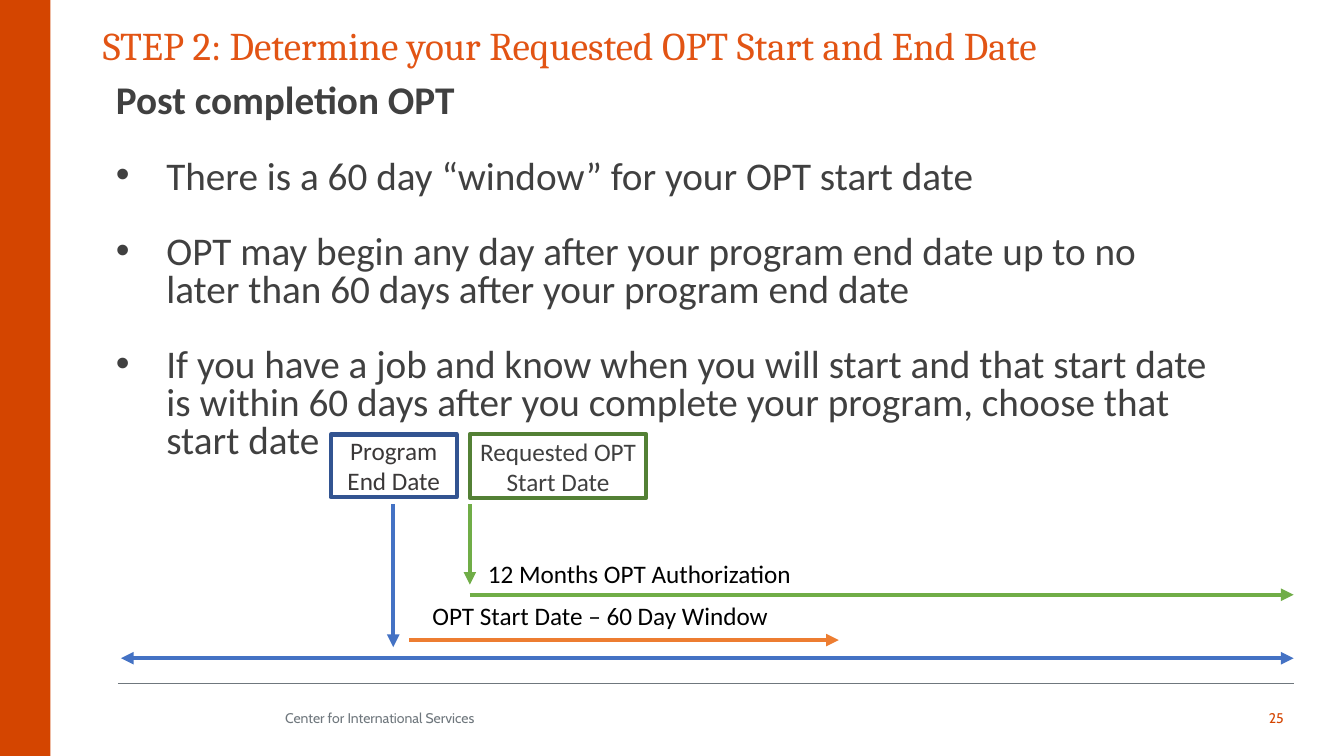
from collections import namedtuple
from dataclasses import dataclass

from lxml import etree
from pptx import Presentation
from pptx import util as u
from pptx.dml.color import RGBColor
from pptx.enum import shapes, text
from pptx.oxml.ns import qn

PX = 9144
Box = namedtuple("Box", "left top width height")


@dataclass(frozen=True)
class Theme:
    accent: str = "D44500"
    title: str = "E25414"
    body: str = "404040"
    muted: str = "6F777D"
    black: str = "000000"
    program: str = "4472C4"
    program_box: str = "325491"
    program_text: str = "3B3838"
    window: str = "ED7D31"
    authorization: str = "70AD47"
    start_box: str = "538035"
    title_font: str = "Cambria"
    body_font: str = "Calibri"
    footer_font: str = "Cabin"
    heading_size: int = 28
    label_size: int = 18
    footer_size: int = 10
    arrow_width: int = 3


THEME = Theme()
TOP, MIDDLE = text.MSO_ANCHOR.TOP, text.MSO_ANCHOR.MIDDLE
LEFT, CENTER, RIGHT = text.PP_ALIGN.LEFT, text.PP_ALIGN.CENTER, text.PP_ALIGN.RIGHT


def apply(target, values):
    for name, value in values.items():
        setattr(target, name, value)


def place(shape, box):
    apply(shape, {name: value * PX for name, value in box._asdict().items()})


def write(paragraph, words, font, size, color, align=LEFT, **paragraph_format):
    paragraph.text = words
    apply(paragraph, {"alignment": align, **paragraph_format})
    apply(paragraph.font, {"name": font, "size": u.Pt(size)})
    paragraph.font.color.rgb = RGBColor.from_string(color)


def set_frame(shape, anchor):
    apply(shape.text_frame, {
        "word_wrap": True,
        "auto_size": text.MSO_AUTO_SIZE.NONE,
        "vertical_anchor": anchor,
    })


def add_label(slide, box, words, font, size, color, align=LEFT, anchor=TOP):
    label = slide.shapes.add_textbox(*(value * PX for value in box))
    set_frame(label, anchor)
    write(label.text_frame.paragraphs[0], words, font, size, color, align)


def add_line(slide, start, end, color, width, arrows=()):
    points = [value * PX for value in (*start, *end)]
    connector = slide.shapes.add_connector(shapes.MSO_CONNECTOR.STRAIGHT, *points)
    connector.line.color.rgb = RGBColor.from_string(color)
    connector.line.width = u.Pt(width)
    properties = connector._element.spPr
    for arrow in arrows:
        etree.SubElement(properties.find(qn("a:ln")), qn(f"a:{arrow}"), type="triangle")
    etree.SubElement(properties, qn("a:effectLst"))


def add_arrow(slide, start, end, color, arrows=("tailEnd",)):
    add_line(slide, start, end, color, THEME.arrow_width, arrows)


def add_date_box(slide, box, words, border, color):
    shape = slide.shapes.add_shape(
        shapes.MSO_SHAPE.RECTANGLE, *(value * PX for value in box))
    shape.shadow.inherit = False
    shape.fill.background()
    shape.line.color.rgb = RGBColor.from_string(border)
    shape.line.width = u.Pt(THEME.arrow_width)
    set_frame(shape, MIDDLE)
    write(shape.text_frame.paragraphs[0], words, THEME.body_font,
          THEME.label_size, color, CENTER)


def add_side_bar(slide, box):
    bar = slide.shapes.add_shape(
        shapes.MSO_SHAPE.RECTANGLE, *(value * PX for value in box))
    bar.shadow.inherit = False
    bar.fill.solid()
    bar.fill.fore_color.rgb = RGBColor.from_string(THEME.accent)
    bar.line.fill.background()


def fill_title(slide, box, words):
    title = slide.shapes.title
    place(title, box)
    set_frame(title, TOP)
    write(title.text_frame.paragraphs[0], words, THEME.title_font,
          THEME.heading_size, THEME.title)


def set_bullet(paragraph, character):
    properties = paragraph._p.get_or_add_pPr()
    indent = 50 * PX if character else 0
    properties.set("marL", str(indent))
    properties.set("indent", str(-indent))
    if character:
        etree.SubElement(properties, qn("a:buFont"), typeface="Arial")
        etree.SubElement(properties, qn("a:buChar"), char=character)
    else:
        etree.SubElement(properties, qn("a:buNone"))


def fill_body(slide, box, heading, bullets):
    body = slide.placeholders[1]
    place(body, box)
    set_frame(body, TOP)
    frame = body.text_frame
    for index, words in enumerate([heading, *bullets]):
        paragraph = frame.add_paragraph() if index else frame.paragraphs[0]
        set_bullet(paragraph, "•" if index else None)
        write(paragraph, words, THEME.body_font, THEME.heading_size, THEME.body,
              line_spacing=0.8, space_before=u.Pt(27 if index else 0),
              space_after=u.Pt(0))
        paragraph.font.bold = index == 0


def add_timeline(slide, box):
    left, top, width, height = box
    right, bottom = left + width, top + height
    program_x, start_x = left + 270, left + 346
    stem_top = top + 69
    window_y, authorization_y = bottom - 18, bottom - 63

    add_arrow(slide, (left, bottom), (right, bottom), THEME.program,
              ("headEnd", "tailEnd"))
    add_arrow(slide, (program_x, stem_top), (program_x, bottom - 11), THEME.program)
    add_date_box(slide, Box(program_x - 62, top, 125, 62), "Program End Date",
                 THEME.program_box, THEME.program_text)

    add_arrow(slide, (left + 286, window_y), (left + 712, window_y), THEME.window)
    add_arrow(slide, (start_x, stem_top), (start_x, authorization_y - 10),
              THEME.authorization)
    add_date_box(slide, Box(start_x, top, 175, 63), "Requested OPT Start Date",
                 THEME.start_box, THEME.body)
    add_arrow(slide, (start_x, authorization_y), (right, authorization_y),
              THEME.authorization)

    for label_box, words in (
        (Box(left + 299, window_y - 44, 400, 40), "OPT Start Date – 60 Day Window"),
        (Box(start_x + 8, authorization_y - 41, 476, 40), "12 Months OPT Authorization"),
    ):
        add_label(slide, label_box, words, THEME.body_font, THEME.label_size, THEME.black)


def add_footer(slide, box, words, number):
    left, top, width, height = box
    right = left + width
    add_line(slide, (left, top), (right, top), THEME.muted, 0.5)
    for label_box, label, color, align in (
        (Box(left + 156, top + 14, 944, height), words, THEME.muted, LEFT),
        (Box(right - 67, top + 14, 67, height), number, THEME.accent, RIGHT),
    ):
        add_label(slide, label_box, label, THEME.footer_font, THEME.footer_size,
                  color, align, MIDDLE)


def build_start_date_slide(presentation):
    slide = presentation.slides.add_slide(presentation.slide_layouts[1])
    add_side_bar(slide, Box(0, 0, 50, 750))
    fill_title(slide, Box(92, 16, 1099, 92),
               "STEP 2: Determine your Requested OPT Start and End Date")
    fill_body(slide, Box(105, 79, 1112, 387), "Post completion OPT", [
        "There is a 60 day “window” for your OPT start date",
        "OPT may begin any day after your program end date up to no later than "
        "60 days after your program end date",
        "If you have a job and know when you will start and that start date is "
        "within 60 days after you complete your program, choose that start date",
    ])
    add_timeline(slide, Box(120, 431, 1163, 222))
    add_footer(slide, Box(117, 678, 1166, 40), "Center for International Services", "25")


def main():
    presentation = Presentation()
    apply(presentation, {"slide_width": 1333 * PX, "slide_height": 750 * PX})
    build_start_date_slide(presentation)
    presentation.save("out.pptx")


if __name__ == "__main__":
    main()
